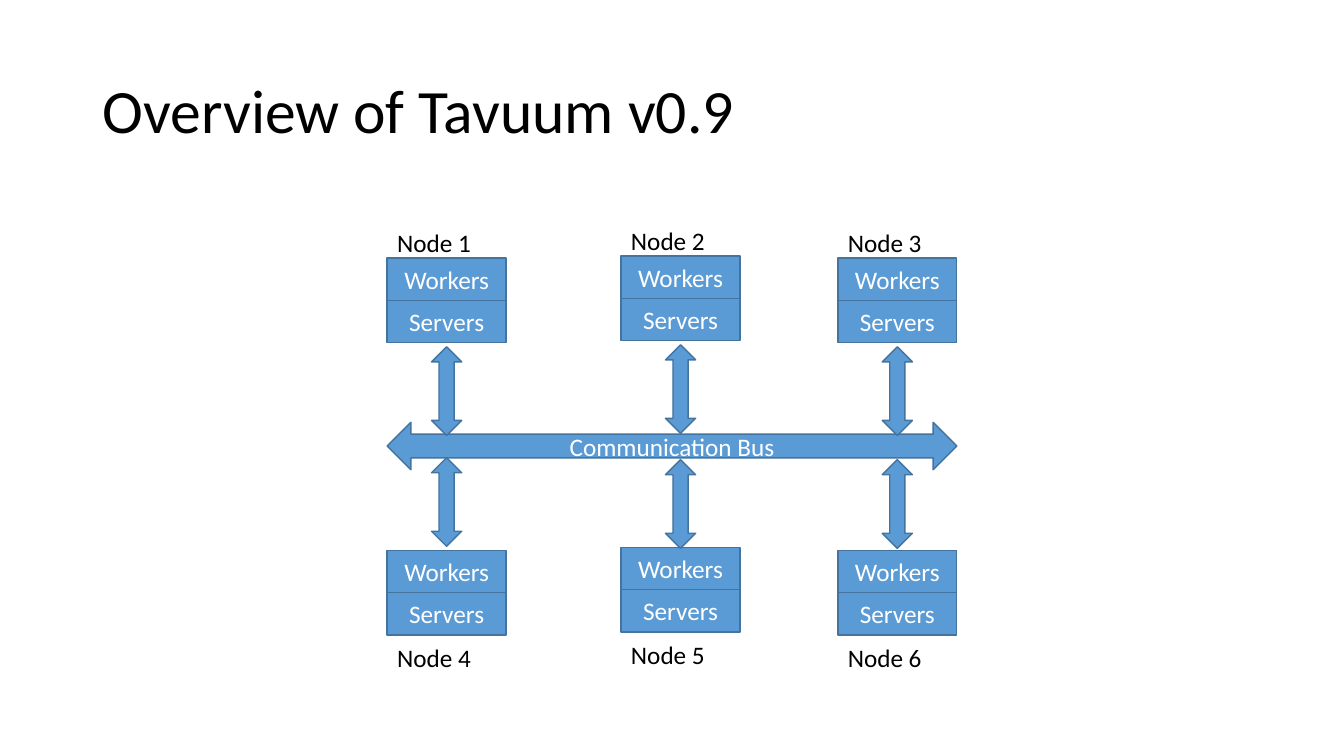
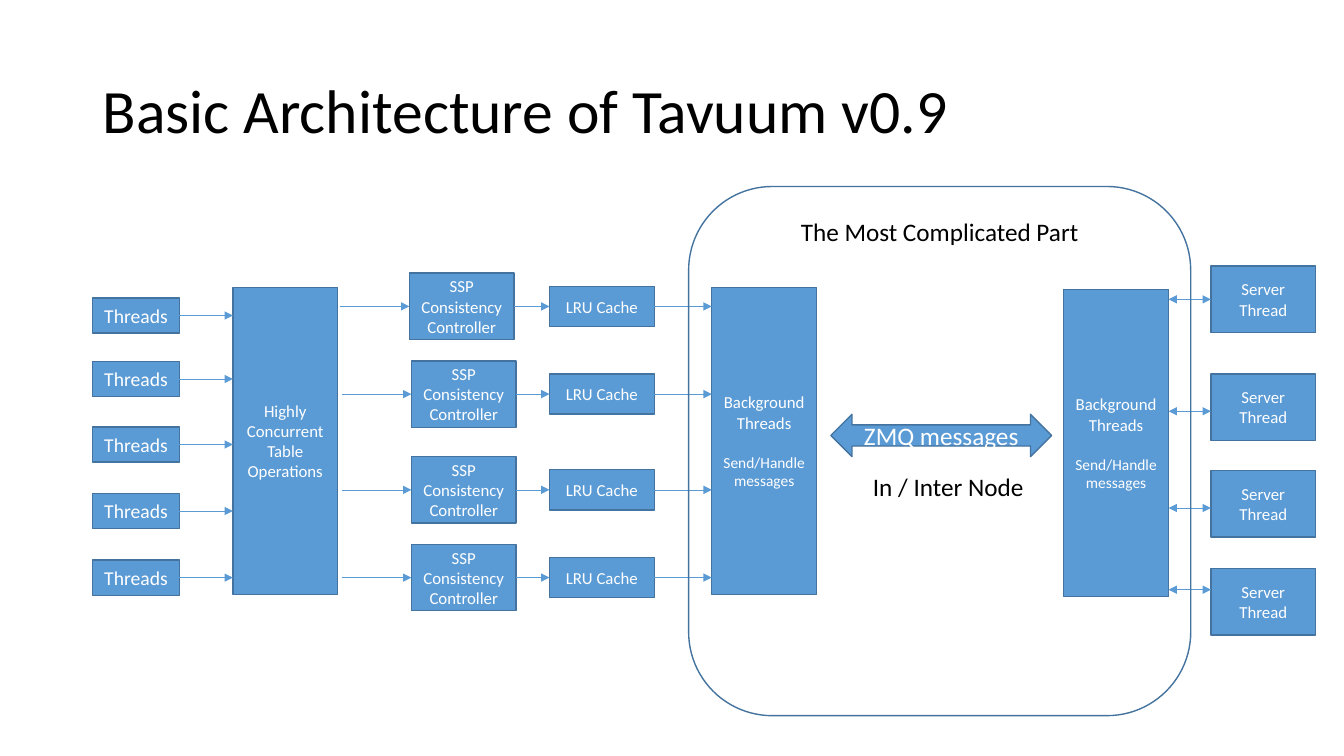
from dataclasses import dataclass

from lxml.etree import SubElement
from pptx import Presentation
from pptx.dml.color import RGBColor
from pptx.enum.shapes import MSO_CONNECTOR as Connector, MSO_SHAPE as Preset
from pptx.enum.text import MSO_ANCHOR as Anchor, PP_ALIGN as Align
from pptx.oxml.ns import qn
from pptx.util import Inches, Pt


@dataclass(frozen=True)
class Theme:
    font: str = "Calibri"
    fill: RGBColor = RGBColor.from_string("5B9BD5")
    outline: RGBColor = RGBColor.from_string("43739E")
    light: RGBColor = RGBColor.from_string("FFFFFF")
    dark: RGBColor = RGBColor.from_string("000000")
    title: int = 44
    body: int = 18
    thread: int = 14
    box: int = 12
    detail: int = 11
    outline_width: float = 1
    wire_width: float = 0.5


THEME = Theme()
TOP, LEFT, BOTTOM, RIGHT = range(4)

# Content of the overview: each column is left edge, then per node
# its name, the top of its boxes, the top of its bus arrow, the top of its label
OVERVIEW_TITLE = "Overview of Tavuum v0.9"
NODE_LAYERS = ["Workers", "Servers"]
NODE_COLUMNS = [
    (3.84, [("Node 1", 2.56, 3.44, 2.21), ("Node 4", 5.46, 4.54, 6.32)]),
    (6.16, [("Node 2", 2.54, 3.42, 2.19), ("Node 5", 5.43, 4.56, 6.29)]),
    (8.31, [("Node 3", 2.56, 3.44, 2.21), ("Node 6", 5.46, 4.56, 6.32)]),
]
NODE_WIDTH, LAYER_HEIGHT = 1.18, 0.42
ARROW_WIDTH, ARROW_HEIGHT = 0.3, 0.88
LABEL_HEIGHT = 0.4

# Content of the architecture: rows are given by their middle heights
ARCHITECTURE_TITLE = "Basic Architecture of Tavuum v0.9"
THREAD_MIDDLES = [3.13, 3.76, 4.41, 5.07, 5.73]
CACHE_ROWS = [(4.06, 3.04), (4.08, 3.91), (4.08, 4.86), (4.08, 5.73)]  # controller left, middle
SERVER_ROWS = [(2.97, 2.97), (4.04, 4.08), (5, 5.04), (5.97, 5.85)]  # box middle, wire height
TABLE_TEXT = [("Highly Concurrent", {}), ("Table Operations", {})]
BACKGROUND_TEXT = [
    ("Background Threads", {}),
    ("Send/Handle messages", {"size": THEME.detail, "before": 14.6}),
]
THREAD_LEFT, TABLE_LEFT, CACHE_LEFT = 0.92, 2.31, 5.45
SENDER_LEFT, RECEIVER_LEFT, SERVER_LEFT = 7.06, 10.55, 12.01
THREAD_WIDTH, THREAD_HEIGHT = 0.86, 0.35
BOX_WIDTH, BOX_HEIGHT, CACHE_HEIGHT, PILLAR_HEIGHT = 1.04, 0.66, 0.4, 3.05
TABLE_WIRE = 0.69


def write_text(shape, text, size=THEME.body, color=THEME.light, align=Align.CENTER,
               anchor=Anchor.MIDDLE, spacing=None):
    """Write a string, or a list of paragraphs with their own size and space before."""
    frame = shape.text_frame
    frame.word_wrap = True
    frame.vertical_anchor = anchor
    paragraphs = [(text, {})] if isinstance(text, str) else text
    for index, (words, own) in enumerate(paragraphs):
        paragraph = frame.add_paragraph() if index else frame.paragraphs[0]
        paragraph.alignment = align
        if spacing:
            paragraph.line_spacing = spacing
        if "before" in own:
            paragraph.space_before = Pt(own["before"])
        run = paragraph.add_run()
        run.text = words
        run.font.name = THEME.font
        run.font.size = Pt(own.get("size", size))
        run.font.color.rgb = color


def add_label(slide, text, left, top, width, height, **text_format):
    label = slide.shapes.add_textbox(*map(Inches, (left, top, width, height)))
    settings = {"color": THEME.dark, "align": Align.LEFT, "anchor": Anchor.TOP}
    write_text(label, text, **{**settings, **text_format})


def add_box(slide, text, left, top, width, height, preset=Preset.RECTANGLE,
            filled=True, **text_format):
    shape = slide.shapes.add_shape(preset, *map(Inches, (left, top, width, height)))
    shape.shadow.inherit = False
    if filled:
        shape.fill.solid()
        shape.fill.fore_color.rgb = THEME.fill
    else:
        shape.fill.background()
    shape.line.color.rgb = THEME.outline
    shape.line.width = Pt(THEME.outline_width)
    if text:
        write_text(shape, text, **text_format)
    return shape


def add_wire(slide, start, end, height, source=None, target=None, both_ways=False):
    """Draw a level arrow; source and target are (shape, side) pairs to join."""
    wire = slide.shapes.add_connector(
        Connector.STRAIGHT, *map(Inches, (start, height, end, height)))
    wire.line.color.rgb = THEME.fill
    wire.line.width = Pt(THEME.wire_width)
    if source:
        wire.begin_connect(*source)
    if target:
        wire.end_connect(*target)
    line = wire.line._get_or_add_ln()
    for tag in (["a:headEnd"] if both_ways else []) + ["a:tailEnd"]:
        SubElement(line, qn(tag), type="triangle")
    SubElement(wire._element.spPr, qn("a:effectLst"))


def add_titled_slide(presentation, title):
    slide = presentation.slides.add_slide(presentation.slide_layouts[6])
    add_label(slide, title, 0.92, 0.4, 11.5, 1.45, size=THEME.title,
              anchor=Anchor.MIDDLE, spacing=0.9)
    return slide


def build_overview(presentation):
    slide = add_titled_slide(presentation, OVERVIEW_TITLE)

    # Nodes
    for left, nodes in NODE_COLUMNS:
        for name, top, _, label_top in nodes:
            for index, layer in enumerate(NODE_LAYERS):
                add_box(slide, layer, left, top + index * LAYER_HEIGHT,
                        NODE_WIDTH, LAYER_HEIGHT)
            add_label(slide, name, left, label_top, NODE_WIDTH, LABEL_HEIGHT)

    # Bus and the arrows that reach it
    bus_left = NODE_COLUMNS[0][0]
    bus_width = NODE_COLUMNS[-1][0] + NODE_WIDTH - bus_left
    add_box(slide, "Communication Bus", bus_left, 4.19, bus_width, 0.47,
            preset=Preset.LEFT_RIGHT_ARROW)
    for left, nodes in NODE_COLUMNS:
        for _, _, arrow_top, _ in nodes:
            add_box(slide, None, left + (NODE_WIDTH - ARROW_WIDTH) / 2, arrow_top,
                    ARROW_WIDTH, ARROW_HEIGHT, preset=Preset.UP_DOWN_ARROW)


def build_architecture(presentation):
    slide = add_titled_slide(presentation, ARCHITECTURE_TITLE)

    def add_row_box(text, left, middle, width=BOX_WIDTH, height=BOX_HEIGHT, size=THEME.box):
        return add_box(slide, text, left, middle - height / 2, width, height, size=size)

    # Pillars
    for text, left, top in [(TABLE_TEXT, TABLE_LEFT, 2.85),
                            (BACKGROUND_TEXT, SENDER_LEFT, 2.85),
                            (BACKGROUND_TEXT, RECEIVER_LEFT, 2.87)]:
        add_box(slide, text, left, top, BOX_WIDTH, PILLAR_HEIGHT, size=THEME.box)

    # Threads into the table operations
    for middle in THREAD_MIDDLES:
        thread = add_row_box("Threads", THREAD_LEFT, middle, THREAD_WIDTH,
                             THREAD_HEIGHT, THEME.thread)
        add_wire(slide, THREAD_LEFT + THREAD_WIDTH, TABLE_LEFT, middle, (thread, RIGHT))

    # Consistency controllers and caches
    for left, middle in CACHE_ROWS:
        controller = add_row_box("SSP Consistency Controller", left, middle)
        cache = add_row_box("LRU Cache", CACHE_LEFT, middle, height=CACHE_HEIGHT)
        add_wire(slide, left - TABLE_WIRE, left, middle, target=(controller, LEFT))
        add_wire(slide, left + BOX_WIDTH, CACHE_LEFT, middle,
                 (controller, RIGHT), (cache, LEFT))
        add_wire(slide, CACHE_LEFT + BOX_WIDTH, SENDER_LEFT, middle, (cache, RIGHT))

    # Server threads
    for middle, wire_height in SERVER_ROWS:
        server = add_row_box("Server Thread", SERVER_LEFT, middle)
        source = (server, LEFT) if wire_height == middle else None
        add_wire(slide, SERVER_LEFT, RECEIVER_LEFT + BOX_WIDTH, wire_height, source,
                 both_ways=True)

    # Messages and the frame around them
    add_box(slide, "ZMQ messages", 8.24, 4.11, 2.19, 0.42, preset=Preset.LEFT_RIGHT_ARROW)
    add_box(slide, "The Most Complicated Part", 6.83, 1.85, 4.98, 5.25,
            preset=Preset.ROUNDED_RECTANGLE, filled=False,
            color=THEME.dark, anchor=Anchor.TOP)
    add_label(slide, "In / Inter Node", 8.56, 4.63, 1.74, LABEL_HEIGHT)


def main():
    presentation = Presentation()
    presentation.slide_width = Inches(13.33)
    presentation.slide_height = Inches(7.5)
    build_overview(presentation)
    build_architecture(presentation)
    presentation.save("out.pptx")


if __name__ == "__main__":
    main()
